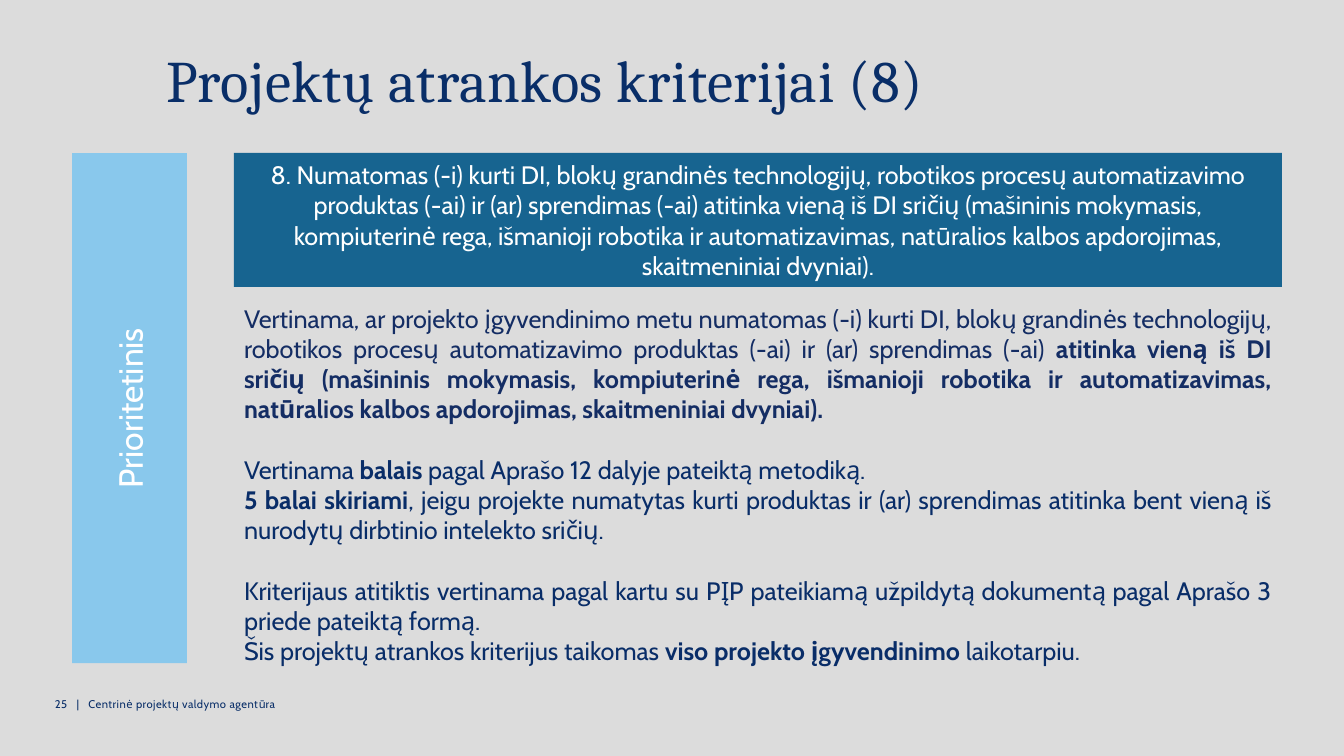
from dataclasses import dataclass

from lxml import etree
from pptx import Presentation
from pptx import util as u
from pptx.dml.color import RGBColor
from pptx.enum import shapes, text
from pptx.oxml import ns

SCALE = 914400 / 100.8  # EMU in one px


@dataclass(frozen=True)
class Theme:
    back: str = "DCDCDC"
    navy: str = "092E68"
    ink: str = "092D68"
    dark: str = "142D64"
    teal: str = "176490"
    sky: str = "89C8EC"
    white: str = "FFFFFF"
    serif: str = "Cambria"
    sans: str = "Cabin"
    head: int = 42
    side: int = 24
    body: int = 18
    foot: int = 8
    gap: float = 21.6


@dataclass(frozen=True)
class Box:
    left: int
    top: int
    width: int
    height: int

    def emu(self) -> list[int]:
        return [round(v * SCALE) for v in (self.left, self.top, self.width, self.height)]


@dataclass(frozen=True)
class Panel:
    box: Box
    fill: str
    words: str
    size: int
    turned: bool = False


@dataclass(frozen=True)
class Para:
    words: str  # asterisks switch bold on and off
    color: str
    gap: float = 0


THEME = Theme()

TITLE = "Projektų atrankos kriterijai (8)"
FOOT = "25   |   Centrinė projektų valdymo agentūra"

PANELS = [
    Panel(
        Box(234, 153, 1048, 134), THEME.teal,
        "8. Numatomas (-i) kurti DI, blokų grandinės technologijų, robotikos procesų "
        "automatizavimo produktas (-ai) ir (ar) sprendimas (-ai) atitinka vieną iš DI sričių "
        "(mašininis mokymasis, kompiuterinė rega, išmanioji robotika ir automatizavimas, "
        "natūralios kalbos apdorojimas, skaitmeniniai dvyniai).",
        THEME.body,
    ),
    Panel(Box(72, 153, 115, 510), THEME.sky, "Prioritetinis", THEME.side, turned=True),
]

PARAS = [
    Para(
        "Vertinama, ar projekto įgyvendinimo metu numatomas (-i) kurti DI, blokų grandinės "
        "technologijų, robotikos procesų automatizavimo produktas (-ai) ir (ar) sprendimas (-ai) "
        "*atitinka vieną iš DI sričių (mašininis mokymasis, kompiuterinė rega, išmanioji robotika "
        "ir automatizavimas, natūralios kalbos apdorojimas, skaitmeniniai dvyniai).*",
        THEME.dark,
    ),
    Para("Vertinama *balais* pagal Aprašo 12 dalyje pateiktą metodiką.", THEME.ink, THEME.gap),
    Para(
        "*5 balai skiriami*, jeigu projekte numatytas kurti produktas ir (ar) sprendimas "
        "atitinka bent vieną iš nurodytų dirbtinio intelekto sričių.",
        THEME.ink,
    ),
    Para(
        "Kriterijaus atitiktis vertinama pagal kartu su PĮP pateikiamą užpildytą dokumentą "
        "pagal Aprašo 3 priede pateiktą formą.",
        THEME.ink, THEME.gap,
    ),
    Para(
        "Šis projektų atrankos kriterijus taikomas *viso projekto įgyvendinimo *laikotarpiu.",
        THEME.ink,
    ),
]


def write(para, words: str, *, size: int, color: str, font: str = THEME.sans,
          align=text.PP_ALIGN.LEFT, track: float = 0, gap: float = 0, line: float = 1) -> None:
    """Fill a paragraph with runs, bold between asterisks."""
    para.alignment = align
    para.line_spacing = line
    para.space_before = u.Pt(gap)
    for i, part in enumerate(words.split("*")):
        if not part:
            continue
        run = para.add_run()
        run.text = part
        run.font.name = font
        run.font.size = u.Pt(size)
        run.font.bold = i % 2 == 1
        run.font.color.rgb = RGBColor.from_string(color)
        if track:
            run.font._element.set("spc", str(round(track * 100)))


def place(shape, box: Box) -> None:
    shape.left, shape.top, shape.width, shape.height = box.emu()


def setup(frame, anchor=text.MSO_ANCHOR.TOP) -> None:
    frame.word_wrap = True
    frame.auto_size = text.MSO_AUTO_SIZE.NONE
    frame.vertical_anchor = anchor


def unlist(para) -> None:
    """Take the bullet and indent off a body paragraph."""
    props = para._p.get_or_add_pPr()
    props.set("marL", "0")
    props.set("indent", "0")
    etree.SubElement(props, ns.qn("a:buNone"))


def draw(slide, panel: Panel) -> None:
    shape = slide.shapes.add_shape(shapes.MSO_SHAPE.RECTANGLE, *panel.box.emu())
    shape.shadow.inherit = False
    shape.fill.solid()
    shape.fill.fore_color.rgb = RGBColor.from_string(panel.fill)
    shape.line.fill.background()
    frame = shape.text_frame
    setup(frame, text.MSO_ANCHOR.MIDDLE)
    if panel.turned:
        shape.rotation = 180
        frame._txBody.bodyPr.set("vert", "vert")
    write(frame.paragraphs[0], panel.words, size=panel.size, color=THEME.white,
          align=text.PP_ALIGN.CENTER)


def main() -> None:
    deck = Presentation()
    deck.slide_width, deck.slide_height = Box(0, 0, 1344, 756).emu()[2:]
    slide = deck.slides.add_slide(deck.slide_layouts[1])
    slide.background.fill.solid()
    slide.background.fill.fore_color.rgb = RGBColor.from_string(THEME.back)

    # Title
    title = slide.shapes.title
    place(title, Box(156, 52, 1060, 66))
    setup(title.text_frame)
    write(title.text_frame.paragraphs[0], TITLE, size=THEME.head, color=THEME.navy,
          font=THEME.serif, track=0.4, line=0.8)

    # Criterion and side label
    for panel in PANELS:
        draw(slide, panel)

    # Body
    body = slide.placeholders[1]
    place(body, Box(234, 298, 1048, 434))
    frame = body.text_frame
    setup(frame)
    for i, item in enumerate(PARAS):
        para = frame.add_paragraph() if i else frame.paragraphs[0]
        unlist(para)
        write(para, item.words, size=THEME.body, color=item.color,
              align=text.PP_ALIGN.JUSTIFY, gap=item.gap)

    # Footer
    foot = slide.shapes.add_textbox(*Box(45, 692, 323, 40).emu())
    setup(foot.text_frame)
    write(foot.text_frame.paragraphs[0], FOOT, size=THEME.foot, color=THEME.navy, track=0.3)

    deck.save("out.pptx")


if __name__ == "__main__":
    main()
